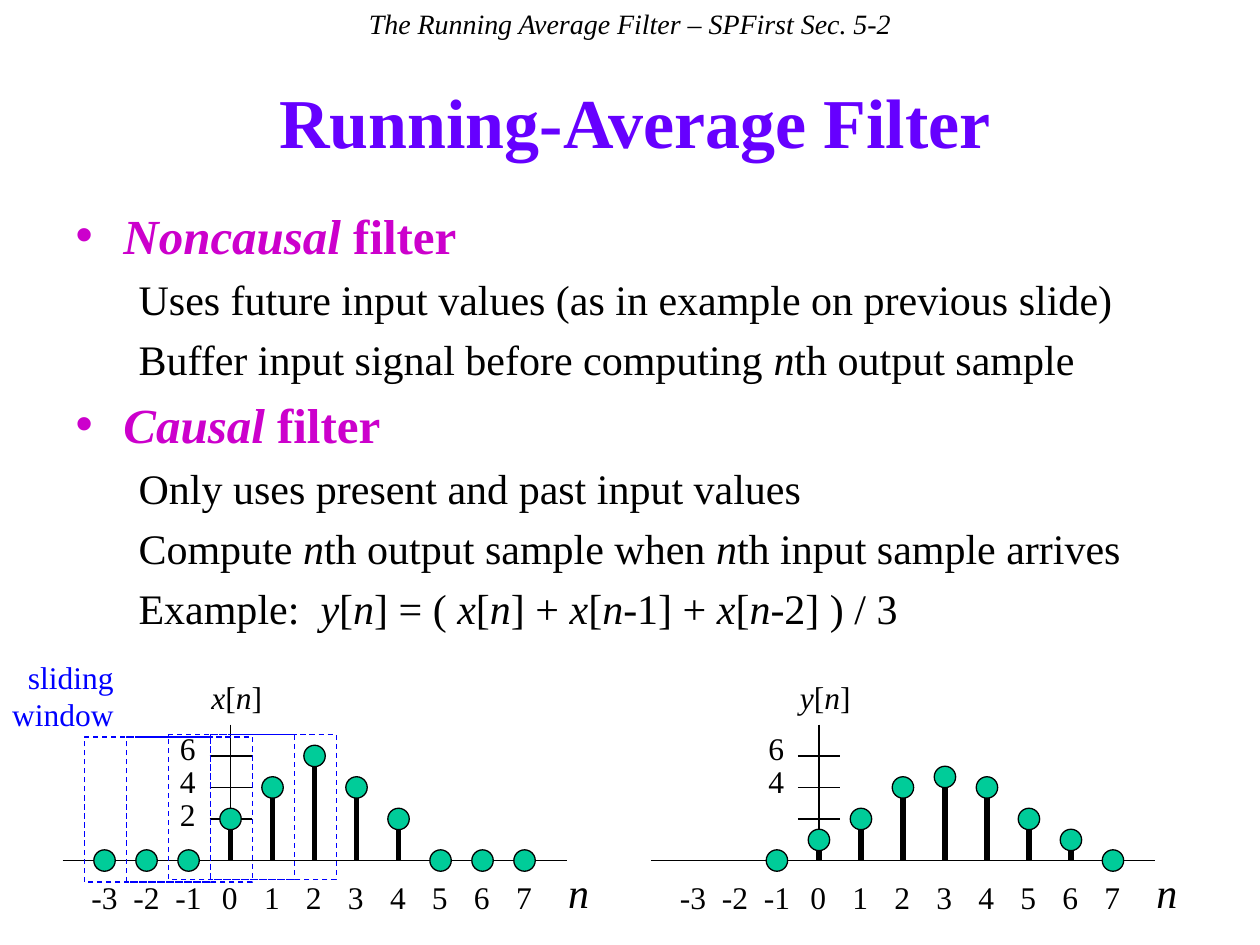
import pptx
import pptx.dml.color
import pptx.enum.dml
import pptx.enum.shapes
import pptx.enum.text
import pptx.oxml
import pptx.oxml.ns
import pptx.util

Inches = pptx.util.Inches
Pt = pptx.util.Pt
ALIGN = pptx.enum.text.PP_ALIGN
SHAPES = pptx.enum.shapes.MSO_SHAPE

FONT = "Times New Roman"
BLACK, BLUE, GREEN, PURPLE, MAGENTA = "000000", "0000FF", "00CC99", "6600FF", "CC00CC"
STEP = 1 / 3
AXIS_TOP = 6.83
DOT = 0.17
INPUT_SIGNAL = {0: 2, 1: 4, 2: 6, 3: 4, 4: 2}

NONCAUSAL = (
    "*Noncausal* filter",
    "Uses future input values (as in example on previous slide)",
    "Buffer input signal before computing *n*th output sample",
)
CAUSAL = (
    "*Causal* filter",
    "Only uses present and past input values",
    "Compute *n*th output sample when *n*th input sample arrives",
    "Example:  *y*[*n*] = ( *x*[*n*] + *x*[*n*-1] + *x*[*n*-2] ) / 3",
)


def rgb(value):
    return pptx.dml.color.RGBColor.from_string(value)


def place(shape, left, top, width, height):
    box = {"left": left, "top": top, "width": width, "height": height}
    for name, value in box.items():
        setattr(shape, name, Inches(value))


def write_runs(paragraph, text, size, color=BLACK, bold=False):
    """Add runs to the paragraph; parts between asterisks are italic."""
    for index, part in enumerate(text.split("*")):
        if part:
            run = paragraph.add_run()
            run.text = part
            formats = {"name": FONT, "size": Pt(size), "bold": bold, "italic": index % 2 == 1}
            for name, value in formats.items():
                setattr(run.font, name, value)
            run.font.color.rgb = rgb(color)


def add_label(slide, text, box, size=18, color=BLACK, align=ALIGN.LEFT):
    shape = slide.shapes.add_textbox(*map(Inches, box))
    shape.text_frame.word_wrap = True
    paragraph = shape.text_frame.paragraphs[0]
    paragraph.alignment = align
    write_runs(paragraph, text, size, color)


def set_bullet(paragraph, margin, indent, character=None):
    properties = paragraph._p.get_or_add_pPr()
    properties.set("marL", str(Inches(margin)))
    properties.set("indent", str(Inches(indent)))
    tag = "a:buChar" if character else "a:buNone"
    bullet = pptx.oxml.parse_xml(f"<{tag} {pptx.oxml.ns.nsdecls('a')}/>")
    if character:
        bullet.set("char", character)
    properties.append(bullet)


def fill_title(title):
    place(title, 0.5, 0.33, 9.08, 1.25)
    title.text_frame.vertical_anchor = pptx.enum.text.MSO_ANCHOR.MIDDLE
    paragraph = title.text_frame.paragraphs[0]
    paragraph.alignment = ALIGN.CENTER
    write_runs(paragraph, "Running-Average Filter", 40, PURPLE, True)


def fill_body(body, lines, top, height):
    """Write a bulleted heading followed by plain second-level lines."""
    place(body, 0.5, top, 9.08, height)
    frame = body.text_frame
    frame.auto_size = pptx.enum.text.MSO_AUTO_SIZE.NONE
    for index, line in enumerate(lines):
        paragraph = frame.add_paragraph() if index else frame.paragraphs[0]
        if index:
            paragraph.level = 1
            paragraph.space_before = Pt(5.5)
            set_bullet(paragraph, 0.5, 0)
            write_runs(paragraph, line, 24)
        else:
            paragraph.space_before = Pt(6)
            set_bullet(paragraph, 0.38, -0.38, "•")
            write_runs(paragraph, line, 28, MAGENTA, True)


def add_line(slide, left, top, right, bottom, width=0.75):
    line = slide.shapes.add_connector(
        pptx.enum.shapes.MSO_CONNECTOR.STRAIGHT, *map(Inches, (left, top, right, bottom)))
    line.line.color.rgb = rgb(BLACK)
    line.line.width = Pt(width)
    effects = pptx.oxml.parse_xml(f"<a:effectLst {pptx.oxml.ns.nsdecls('a')}/>")
    line._element.spPr.append(effects)


def add_outlined(slide, kind, box, color):
    shape = slide.shapes.add_shape(kind, *map(Inches, box))
    shape.shadow.inherit = False
    shape.fill.background()
    shape.line.color.rgb = rgb(color)
    shape.line.width = Pt(0.75)
    return shape


def add_window(slide, left, top):
    window = add_outlined(slide, SHAPES.RECTANGLE, (left, top, 1, 1.15), BLUE)
    window.line.dash_style = pptx.enum.dml.MSO_LINE.DASH


def height_of(value):
    """Vertical position of a sample; zero sits on the axis."""
    return 6.75 - value / 8 if value else AXIS_TOP


def add_sample(slide, center, value):
    top = height_of(value)
    if value:
        add_line(slide, center, AXIS_TOP, center, top, 3)
    dot = add_outlined(slide, SHAPES.OVAL, (center - DOT / 2, top - DOT / 2, DOT, DOT), BLACK)
    dot.fill.solid()
    dot.fill.fore_color.rgb = rgb(GREEN)


def add_plot(slide, origin, name, samples, tick_labels):
    add_line(slide, origin - 4 * STEP, AXIS_TOP, origin + 8 * STEP, AXIS_TOP)
    add_line(slide, origin, 5.75, origin, AXIS_TOP)
    for value in (2, 4, 6):
        tick = height_of(value)
        add_line(slide, origin - STEP / 2, tick, origin + STEP / 2, tick)
    for value in tick_labels:
        add_label(slide, str(value), (origin - 0.5, 6.52 - 0.13 * value, 0.25, 0.4))
    for n in range(-3, 8):
        width, align = (0.5, ALIGN.CENTER) if n < 0 else (STEP, ALIGN.LEFT)
        add_label(slide, str(n), (origin + n * STEP - width / 2, 6.92, width, 0.4), align=align)
    add_label(slide, f"*{name}*[*n*]", (origin - 0.25, 5.33, 0.75, 0.4))
    add_label(slide, "*n*", (origin + 2.58, 6.83, 0.58, 0.5), 24)
    for n, value in samples.items():
        add_sample(slide, origin + n * STEP, value)


def main():
    presentation = pptx.Presentation()
    presentation.slide_width, presentation.slide_height = Inches(10), Inches(7.5)
    slide = presentation.slides.add_slide(presentation.slide_layouts.get_by_name("Two Content"))
    for placeholder in list(slide.placeholders):
        if placeholder.placeholder_format.idx > 2:
            placeholder._element.getparent().remove(placeholder._element)

    fill_title(slide.shapes.title)
    fill_body(slide.placeholders[1], NONCAUSAL, 1.58, 1.58)
    fill_body(slide.placeholders[2], CAUSAL, 3.08, 2.08)
    add_label(slide, "*The Running Average Filter – SPFirst Sec. 5-2*",
              (0, 0, 10, 0.37), 16, align=ALIGN.CENTER)

    inputs = {n: INPUT_SIGNAL.get(n, 0) for n in range(-3, 8)}
    outputs = {n: sum(inputs[n - delay] for delay in range(3)) / 3 for n in range(0, 8)}
    add_plot(slide, 1.83, "x", inputs, (2, 4, 6))
    add_plot(slide, 6.5, "y", {-1: 0, **outputs}, (4, 6))
    for index, top in enumerate((5.85, 5.85, 5.83, 5.83)):
        add_window(slide, 0.67 + index * STEP, top)
    add_label(slide, "sliding window", (-0.08, 5.17, 1.08, 0.71), color=BLUE, align=ALIGN.RIGHT)
    presentation.save("out.pptx")


if __name__ == "__main__":
    main()
